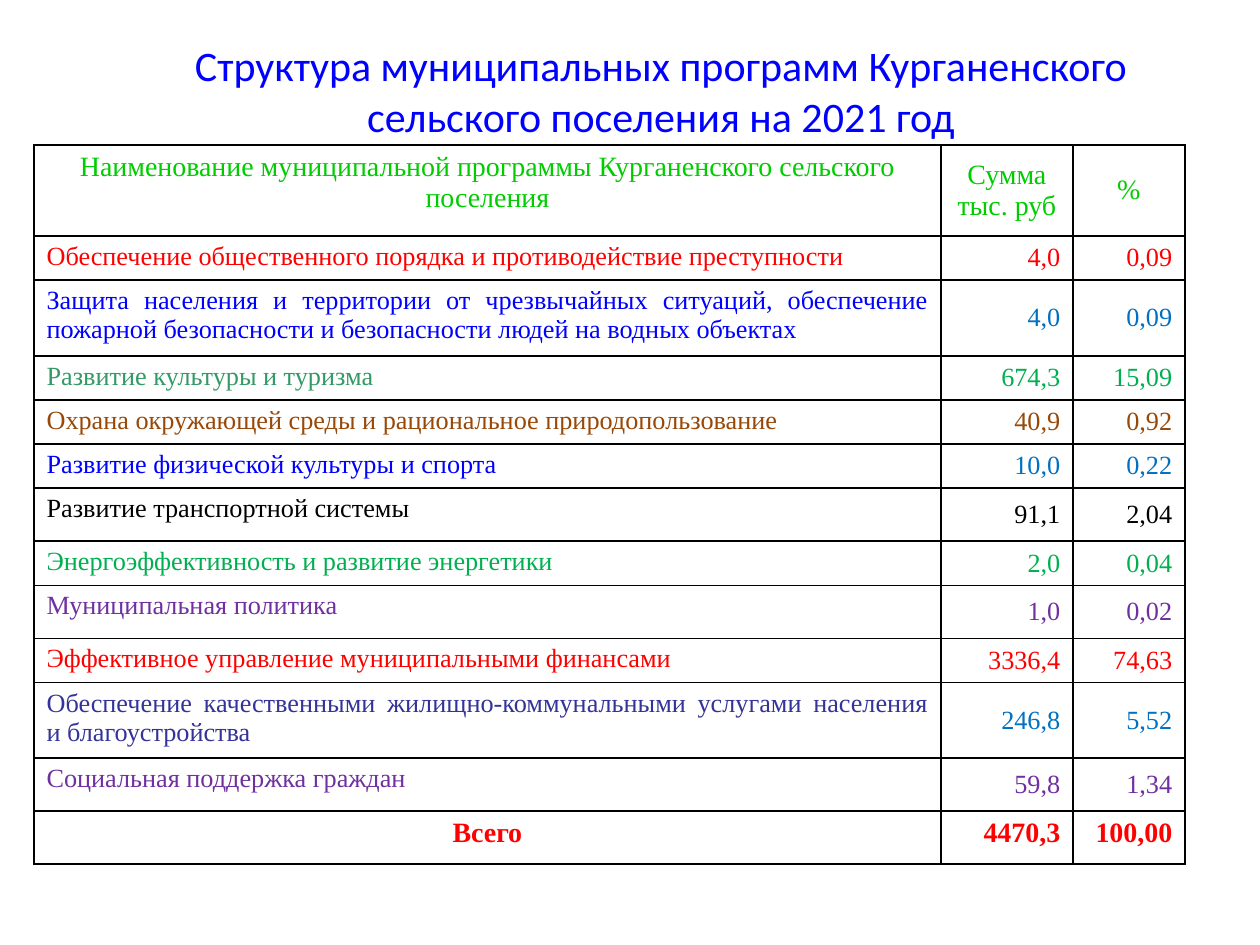
from typing import NamedTuple

import pptx
import pptx.dml.color
import pptx.enum.text
import pptx.oxml
import pptx.oxml.ns
import pptx.util

SCALE = 914400 / 126  # EMU per px
ALIGN = pptx.enum.text.PP_ALIGN
ANCHOR = pptx.enum.text.MSO_ANCHOR
SERIF = "Times New Roman"


class Style(NamedTuple):
    size: int
    color: str
    align: int
    anchor: int = ANCHOR.TOP
    font: str = SERIF
    bold: bool = False


class Program(NamedTuple):
    name: str
    total: str
    share: str
    height: int
    color: str
    tint: str = ""  # colour of the numbers, when it differs


HEADS = ("Наименование муниципальной программы Курганенского сельского поселения",
         "Сумма тыс. руб", "%")
SUMS = ("Всего", "4470,3", "100,00")
PROGRAMS = [
    Program("Обеспечение общественного порядка и противодействие преступности",
            "4,0", "0,09", 29, "FF0000"),
    Program("Защита населения и территории от чрезвычайных ситуаций, обеспечение "
            "пожарной безопасности и безопасности людей на водных объектах",
            "4,0", "0,09", 48, "0000FF", "0070C0"),
    Program("Развитие культуры и туризма", "674,3", "15,09", 30, "339966", "00B050"),
    Program("Охрана окружающей среды и рациональное природопользование",
            "40,9", "0,92", 30, "984807"),
    Program("Развитие физической культуры и спорта",
            "10,0", "0,22", 39, "0000FF", "0070C0"),
    Program("Развитие транспортной системы", "91,1", "2,04", 53, "000000"),
    Program("Энергоэффективность и развитие энергетики", "2,0", "0,04", 25, "00B050"),
    Program("Муниципальная политика", "1,0", "0,02", 53, "7030A0"),
    Program("Эффективное управление муниципальными финансами",
            "3336,4", "74,63", 37, "FF0000"),
    Program("Обеспечение качественными жилищно-коммунальными услугами населения "
            "и благоустройства", "246,8", "5,52", 37, "333399", "0070C0"),
    Program("Социальная поддержка граждан", "59,8", "1,34", 53, "7030A0"),
]
WIDTHS = (907, 132, 112)
HEAD_H, SUM_H = 91, 53


def px(n: int) -> int:
    return round(n * SCALE)


def rgb(code: str):
    return pptx.dml.color.RGBColor.from_string(code)


def write(frame, text: str, style: Style) -> None:
    frame.text = text
    para = frame.paragraphs[0]
    para.alignment = style.align
    font = para.runs[0].font
    font.name, font.size, font.bold = style.font, pptx.util.Pt(style.size), style.bold
    font.color.rgb = rgb(style.color)


def frame_cell(cell, color: str = "000000", width: int = 12700) -> None:
    props = cell._tc.get_or_add_tcPr()
    for spot, side in enumerate(("lnL", "lnR", "lnT", "lnB")):
        line = pptx.oxml.parse_xml(
            f'<a:{side} {pptx.oxml.ns.nsdecls("a")} w="{width}"><a:solidFill>'
            f'<a:srgbClr val="{color}"/></a:solidFill></a:{side}>')
        props.insert(spot, line)


def fill_row(table, row: int, texts: tuple, styles: tuple) -> None:
    for col, (text, style) in enumerate(zip(texts, styles)):
        cell = table.cell(row, col)
        cell.fill.background()
        cell.vertical_anchor = style.anchor
        write(cell.text_frame, text, style)
        frame_cell(cell)


def add_title(slide) -> None:
    box = slide.shapes.add_textbox(px(126), px(35), px(1070), px(110))
    frame = box.text_frame
    frame.word_wrap = True
    frame.vertical_anchor = ANCHOR.MIDDLE
    write(frame, "Структура муниципальных программ Курганенского сельского "
                 "поселения на 2021 год",
          Style(24, "0000FF", ALIGN.CENTER, font="Calibri"))


def add_budget(slide) -> None:
    heights = [HEAD_H, *(p.height for p in PROGRAMS), SUM_H]
    table = slide.shapes.add_table(len(heights), len(WIDTHS), px(34), px(145),
                                   px(sum(WIDTHS)), px(sum(heights))).table
    table.first_row = table.horz_banding = False
    for col, width in zip(table.columns, WIDTHS):
        col.width = px(width)
    for row, height in zip(table.rows, heights):
        row.height = px(height)

    # Header
    head = Style(16, "00CC00", ALIGN.CENTER)
    label = head._replace(anchor=ANCHOR.MIDDLE)
    fill_row(table, 0, HEADS, (head, label, label))

    # Programs
    for row, item in enumerate(PROGRAMS, 1):
        name = Style(15, item.color, ALIGN.JUSTIFY)
        num = Style(15, item.tint or item.color, ALIGN.RIGHT, ANCHOR.MIDDLE)
        fill_row(table, row, (item.name, item.total, item.share), (name, num, num))

    # Totals
    name = Style(16, "FF0000", ALIGN.CENTER, bold=True)
    num = name._replace(align=ALIGN.RIGHT)
    fill_row(table, len(heights) - 1, SUMS, (name, num, num))


def main() -> None:
    deck = pptx.Presentation()
    deck.slide_width, deck.slide_height = px(1260), px(945)
    slide = deck.slides.add_slide(deck.slide_layouts[6])
    add_title(slide)
    add_budget(slide)
    deck.save("out.pptx")


if __name__ == "__main__":
    main()
